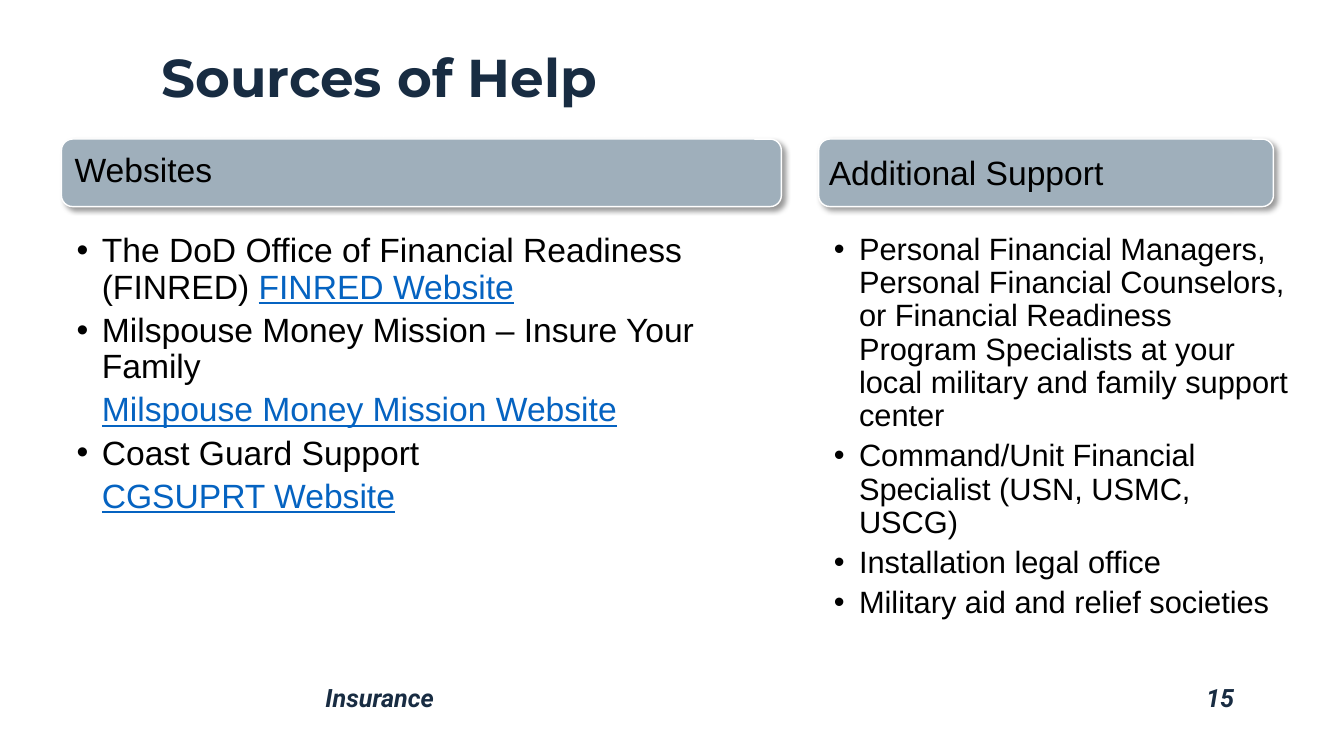
"""Build the "Sources of Help" slide with two headed lists."""
from dataclasses import dataclass

from lxml.etree import SubElement
from pptx import Presentation
from pptx.dml.color import RGBColor
from pptx.enum.shapes import MSO_SHAPE as Shape
from pptx.enum.text import MSO_ANCHOR as Anchor, MSO_AUTO_SIZE as AutoSize, PP_ALIGN as Align
from pptx.oxml import parse_xml
from pptx.oxml.ns import nsdecls, qn
from pptx.util import Inches, Pt

NAVY = RGBColor(0x18, 0x2C, 0x42)
STEEL = RGBColor(0x9F, 0xAF, 0xBB)
WHITE = RGBColor(0xFF, 0xFF, 0xFF)
BLACK = RGBColor(0x00, 0x00, 0x00)
LINK_BLUE = RGBColor(0x05, 0x63, 0xC1)

Box = tuple[float, float, float, float]


@dataclass(frozen=True)
class Item:
    text: str = ""
    link: str = ""


@dataclass(frozen=True)
class Section:
    heading: str
    bar: Box
    heading_box: Box
    list_box: Box
    list_size: int
    items: list[Item]


SECTIONS = [
    Section(
        "Websites", (0.61, 1.38, 7.14, 0.67), (0.64, 1.38, 6.02, 0.65),
        (0.61, 2.27, 7.14, 3.47), 24,
        [
            Item("The DoD Office of Financial Readiness (FINRED) ", "FINRED Website"),
            Item("Milspouse Money Mission – Insure Your Family"),
            Item(link="Milspouse Money Mission Website"),
            Item("Coast Guard Support"),
            Item(link="CGSUPRT Website"),
        ],
    ),
    Section(
        "Additional Support", (8.12, 1.38, 4.51, 0.67), (8.12, 1.38, 4.51, 0.7),
        (8.12, 2.27, 4.77, 3.73), 22,
        [
            Item("Personal Financial Managers, Personal Financial Counselors, "
                 "or Financial Readiness Program Specialists at your local "
                 "military and family support center"),
            Item("Command/Unit Financial Specialist (USN, USMC, USCG)"),
            Item("Installation legal office"),
            Item("Military aid and relief societies"),
        ],
    ),
]


def place(shape, box: Box, anchor=Anchor.TOP):
    """Position a text shape and return its text frame."""
    shape.left, shape.top, shape.width, shape.height = map(Inches, box)
    frame = shape.text_frame
    frame.word_wrap = True
    frame.auto_size = AutoSize.NONE
    frame.vertical_anchor = anchor
    return frame


def write(paragraph, text: str, *, size: int, font: str = "Arial",
          color: RGBColor = BLACK, bold: bool = False, italic: bool = False,
          underline: bool = False, align=Align.LEFT, before: int = 0) -> None:
    """Append a formatted run to a paragraph."""
    paragraph.alignment = align
    paragraph.line_spacing = 0.9
    paragraph.space_before = Pt(before)
    run = paragraph.add_run()
    run.text = text
    run.font.name = font
    run.font.size = Pt(size)
    run.font.color.rgb = color
    run.font.bold = bold
    run.font.italic = italic
    run.font.underline = underline


def indent(paragraph, bulleted: bool) -> None:
    """Set the list indent, hanging a bullet where there is one."""
    properties = paragraph._p.get_or_add_pPr()
    properties.set("marL", str(Inches(0.3)))
    properties.set("indent", str(Inches(-0.25 if bulleted else 0)))
    if bulleted:
        SubElement(properties, qn("a:buFont")).set("typeface", "Arial")
        SubElement(properties, qn("a:buChar")).set("char", "•")
    else:
        SubElement(properties, qn("a:buNone"))


def add_bar(slide, box: Box) -> None:
    """Draw a shadowed heading bar behind the text."""
    bar = slide.shapes.add_shape(Shape.ROUNDED_RECTANGLE, *map(Inches, box))
    bar.fill.solid()
    bar.fill.fore_color.rgb = STEEL
    bar.line.color.rgb = WHITE
    bar.line.width = Pt(1)
    bar._element.spPr.append(parse_xml(
        f'<a:effectLst {nsdecls("a")}><a:outerShdw blurRad="{Pt(4)}" dist="{Pt(3)}" '
        'dir="2700000" rotWithShape="0"><a:srgbClr val="000000">'
        '<a:alpha val="40000"/></a:srgbClr></a:outerShdw></a:effectLst>'))
    slide.shapes._spTree.insert(2, bar._element)


def add_section(slide, section: Section, heading, body) -> None:
    """Fill a heading and its list."""
    add_bar(slide, section.bar)
    frame = place(heading, section.heading_box, Anchor.MIDDLE)
    write(frame.paragraphs[0], section.heading, size=24)
    frame = place(body, section.list_box)
    for number, item in enumerate(section.items):
        paragraph = frame.add_paragraph() if number else frame.paragraphs[0]
        indent(paragraph, bool(item.text))
        before = 5 if number else 0
        if item.text:
            write(paragraph, item.text, size=section.list_size, before=before)
        if item.link:
            write(paragraph, item.link, size=section.list_size, before=before,
                  color=LINK_BLUE, underline=True)


def add_footer(slide, text: str, box: Box, align=Align.LEFT) -> None:
    """Add a footer text."""
    frame = place(slide.shapes.add_textbox(*map(Inches, box)), box)
    write(frame.paragraphs[0], text, size=18, font="Roboto", color=NAVY,
          bold=True, italic=True, align=align)


def main() -> None:
    """Build and save the presentation."""
    presentation = Presentation()
    presentation.slide_width = Inches(13.33)
    presentation.slide_height = Inches(7.5)
    comparison = presentation.slide_layouts.get_by_name("Comparison")
    slide = presentation.slides.add_slide(comparison)
    title, *bodies = slide.placeholders
    frame = place(title, (1.5, 0.11, 10.84, 1.02), Anchor.BOTTOM)
    write(frame.paragraphs[0], "Sources of Help", size=38, font="Montserrat",
          color=NAVY, bold=True)
    for section, heading, body in zip(SECTIONS, bodies[::2], bodies[1::2]):
        add_section(slide, section, heading, body)
    add_footer(slide, "Insurance", (3.13, 6.75, 7.63, 0.38))
    add_footer(slide, "15", (10.76, 6.75, 1.58, 0.38), Align.RIGHT)
    presentation.save("out.pptx")


if __name__ == "__main__":
    main()
